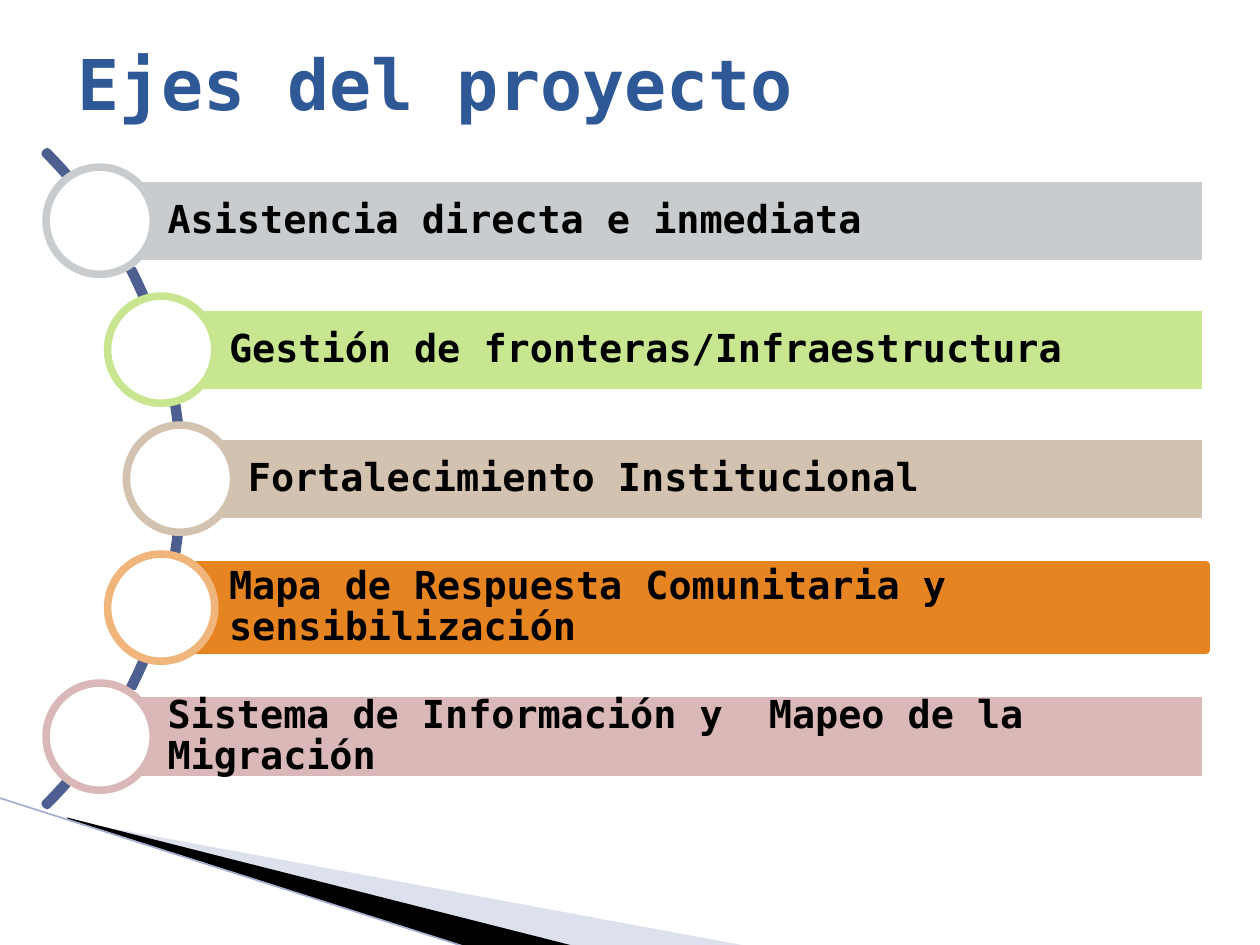
from dataclasses import dataclass

from lxml.etree import SubElement
from pptx import Presentation
from pptx.dml.color import RGBColor
from pptx.enum.shapes import MSO_CONNECTOR as Connector, MSO_SHAPE as Shape
from pptx.enum.text import MSO_ANCHOR as Anchor, PP_ALIGN as Align
from pptx.oxml.ns import qn
from pptx.util import Cm, Pt

TITLE = "Ejes del proyecto"

# text, bar colour, bar outline, ring colour, centre of the ring in cm
AXES = [
    ("Asistencia directa e inmediata", "C8CCCE", "FFFFFF", "C8CCCE", 2.01),
    ("Gestión de fronteras/Infraestructura", "C7E68F", "FFFFFF", "C7E68F", 3.25),
    ("Fortalecimiento Institucional", "D4C2B0", "FFFFFF", "D4C2B0", 3.63),
    ("Mapa de Respuesta Comunitaria y sensibilización",
     "E68422", "E68422", "F0B57A", 3.25),
    ("Sistema de Información y  Mapeo de la Migración",
     "DAB8B8", "FFFFFF", "DAB8B8", 2.01),
]

# corner points in cm, colour, opacity in percent
WEDGES = [
    ([(1.4, 16.54), (15.11, 19.08), (11.58, 19.08), (1.4, 16.51)], "ACB4D5", 40),
    ([(1.35, 16.48), (11.61, 19.08), (9.45, 19.1), (1.37, 16.51)], "000000", 100),
]
EDGE = (-0.03, 16.08, 9.42, 19.1)


@dataclass(frozen=True)
class Theme:
    font: str = "DejaVu Sans Mono"
    title: str = "2F5897"
    text: str = "000000"
    arc: str = "4D5E90"
    edge: str = "A4AED0"
    disc: str = "FFFFFF"
    title_size: float = 40
    text_size: float = 22
    outline: float = 4.33
    edge_width: float = 0.95


THEME = Theme()
MIDDLE, PITCH = 9.65, 2.6
BAR_RIGHT, BAR_HEIGHT = 24.31, 1.73
RING, ARC, ARC_CENTRE = 2.16, 18.64, -5.64


def rgb(colour):
    return RGBColor.from_string(colour)


def set_font(para, size, colour):
    font = para.font
    font.name, font.size, font.bold = THEME.font, Pt(size), True
    font.color.rgb = rgb(colour)


def paint(shape, fill=None, line=None):
    shape.shadow.inherit = False
    if fill:
        shape.fill.solid()
        shape.fill.fore_color.rgb = rgb(fill)
    else:
        shape.fill.background()
    if line:
        shape.line.color.rgb = rgb(line)
        shape.line.width = Pt(THEME.outline)
    else:
        shape.line.fill.background()


def add_shape(page, kind, left, centre, width, height):
    """Place a shape by its left edge and vertical centre, in cm."""
    return page.shapes.add_shape(
        kind, Cm(left), Cm(centre - height / 2), Cm(width), Cm(height))


def add_wedge(page, points, colour, opacity):
    corners = [(Cm(x), Cm(y)) for x, y in points]
    builder = page.shapes.build_freeform(*corners[0])
    builder.add_line_segments(corners[1:], close=True)
    wedge = builder.convert_to_shape()
    paint(wedge, colour)
    if opacity < 100:
        tint = wedge.fill._xPr.find(".//" + qn("a:srgbClr"))
        SubElement(tint, qn("a:alpha"), val=str(opacity * 1000))


def add_edge(page):
    edge = page.shapes.add_connector(Connector.STRAIGHT, *map(Cm, EDGE))
    edge.line.color.rgb = rgb(THEME.edge)
    edge.line.width = Pt(THEME.edge_width)
    SubElement(edge._element.spPr, qn("a:effectLst"))


def add_title(page):
    title = page.shapes.title
    title.left, title.top, title.width, title.height = map(
        Cm, (1.3, 0.08, 22.86, 3.18))
    frame = title.text_frame
    frame.text = TITLE
    frame.vertical_anchor = Anchor.MIDDLE
    para = frame.paragraphs[0]
    para.alignment = Align.LEFT
    set_font(para, THEME.title_size, THEME.title)


def add_arc(page):
    arc = add_shape(page, Shape.BLOCK_ARC, ARC_CENTRE - ARC / 2, MIDDLE, ARC, ARC)
    for index, value in enumerate((189, 27, 0.003)):
        arc.adjustments[index] = value
    paint(arc, line=THEME.arc)


def add_axis(page, centre, text, fill, outline, ring_colour, left):
    bar = add_shape(page, Shape.RECTANGLE, left, centre, BAR_RIGHT - left, BAR_HEIGHT)
    paint(bar, fill, outline)
    frame = bar.text_frame
    frame.text = text
    frame.word_wrap = True
    frame.vertical_anchor = Anchor.MIDDLE
    frame.margin_left = Cm(1.37)
    frame.margin_top = frame.margin_right = frame.margin_bottom = Cm(0.15)
    para = frame.paragraphs[0]
    para.alignment = Align.LEFT
    para.line_spacing = 0.9
    set_font(para, THEME.text_size, THEME.text)

    ring = add_shape(page, Shape.OVAL, left - RING / 2, centre, RING, RING)
    paint(ring, THEME.disc, ring_colour)


def main():
    deck = Presentation()
    deck.slide_width, deck.slide_height = Cm(25.4), Cm(19.05)
    page = deck.slides.add_slide(deck.slide_layouts[5])
    for wedge in WEDGES:
        add_wedge(page, *wedge)
    add_edge(page)
    add_title(page)
    add_arc(page)
    first = MIDDLE - PITCH * (len(AXES) - 1) / 2
    for index, axis in enumerate(AXES):
        add_axis(page, first + index * PITCH, *axis)
    deck.save("out.pptx")


if __name__ == "__main__":
    main()
